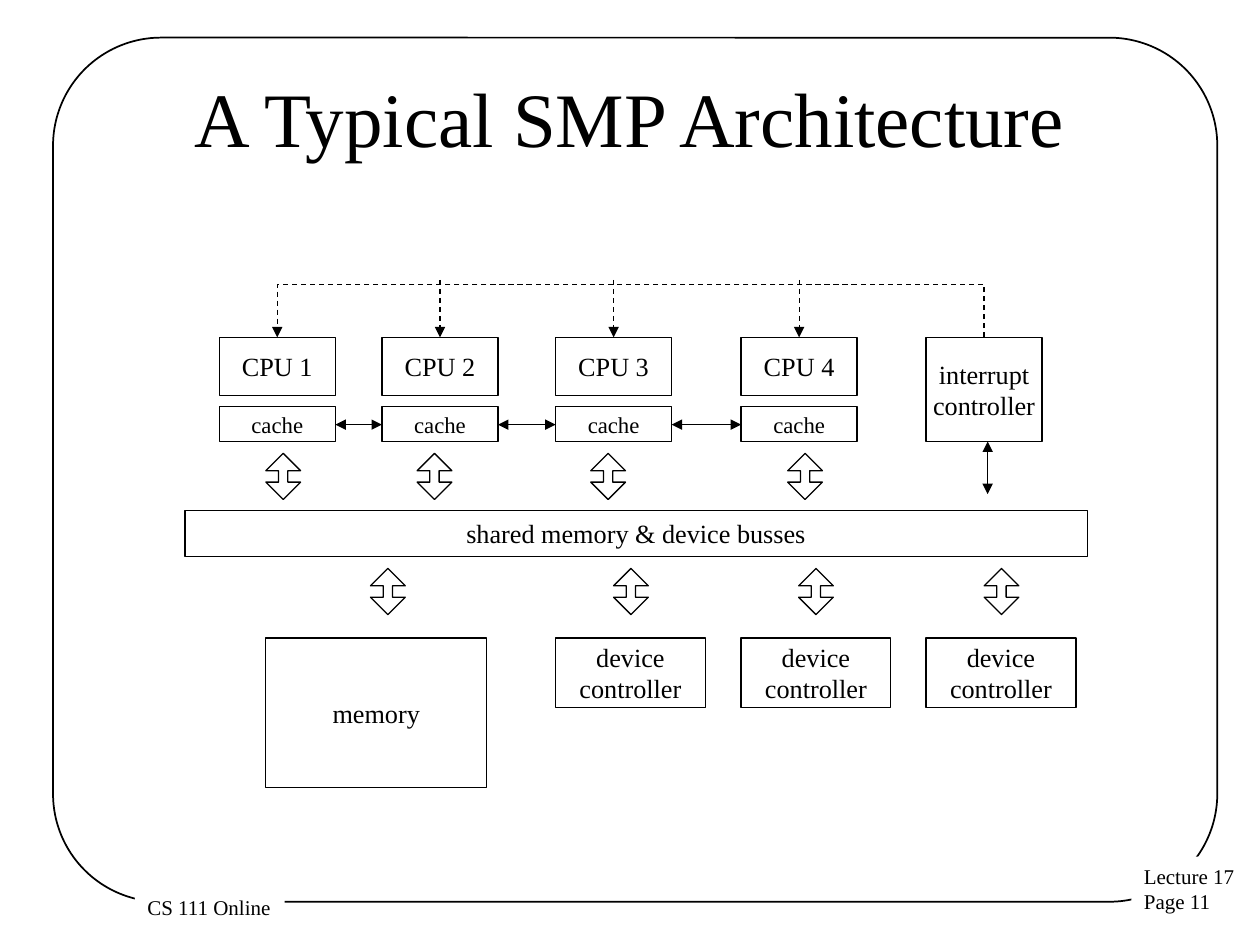
from lxml import etree
from pptx import Presentation
from pptx import util as u
from pptx.dml.color import RGBColor
from pptx.enum import dml, shapes, text
from pptx.oxml import ns

BLACK = RGBColor(0, 0, 0)
WHITE = RGBColor(255, 255, 255)
FONT = "Times New Roman"


def add_box(left, top, width, height, lines=(), size=15, kind=shapes.MSO_SHAPE.RECTANGLE,
            line_width=0.75, fill=None, centred=True, inset=(0.28, 0.15)):
    shape = slide.shapes.add_shape(kind, u.Cm(left), u.Cm(top), u.Cm(width), u.Cm(height))
    shape.shadow.inherit = False
    if fill is None:
        shape.fill.background()
    else:
        shape.fill.solid()
        shape.fill.fore_color.rgb = fill
    if line_width:
        shape.line.color.rgb = BLACK
        shape.line.width = u.Pt(line_width)
    else:
        shape.line.fill.background()
    frame = shape.text_frame
    frame.word_wrap = False
    frame.margin_left = frame.margin_right = u.Cm(inset[0])
    frame.margin_top = frame.margin_bottom = u.Cm(inset[1])
    frame.vertical_anchor = text.MSO_ANCHOR.MIDDLE if centred else text.MSO_ANCHOR.TOP
    for index, line in enumerate(lines):
        paragraph = frame.add_paragraph() if index else frame.paragraphs[0]
        paragraph.alignment = text.PP_ALIGN.CENTER if centred else text.PP_ALIGN.LEFT
        run = paragraph.add_run()
        run.text = line
        run.font.name = FONT
        run.font.size = u.Pt(size)
        run.font.color.rgb = BLACK
    return shape


def style_line(shape, ends, dashed=False):
    shape.line.color.rgb = BLACK
    shape.line.width = u.Pt(0.75)
    if dashed:
        shape.line.dash_style = dml.MSO_LINE.DASH
    outline = shape.line._get_or_add_ln()
    for end in ends:
        etree.SubElement(outline, ns.qn(f"a:{end}"), type="triangle")
    properties = shape._element.spPr
    if properties.find(ns.qn("a:effectLst")) is None:
        etree.SubElement(properties, ns.qn("a:effectLst"))


presentation = Presentation()
presentation.slide_width = u.Cm(25.4)
presentation.slide_height = u.Cm(19.05)
slide = presentation.slides.add_slide(presentation.slide_layouts[6])

frame_box = add_box(1.07, 0.76, 23.47, 17.42, kind=shapes.MSO_SHAPE.ROUNDED_RECTANGLE, line_width=1)
frame_box.adjustments[0] = 0.125
for left, top, width, height, lines in [
    (22.81, 17.27, 2.36, 1.3, ["Lecture 17", "Page 11"]),
    (2.72, 17.91, 3.02, 0.76, ["CS 111 Online"]),
]:
    footer = add_box(left, top, width, height, lines, size=12, line_width=0, fill=WHITE,
                     centred=False, inset=(0.25, 0.13))
    footer.text_frame.auto_size = text.MSO_AUTO_SIZE.SHAPE_TO_FIT_TEXT

title = slide.shapes.add_textbox(u.Cm(1.27), u.Cm(0.76), u.Cm(22.86), u.Cm(3.17))
title.text_frame.word_wrap = True
title.text_frame.vertical_anchor = text.MSO_ANCHOR.MIDDLE
paragraph = title.text_frame.paragraphs[0]
paragraph.alignment = text.PP_ALIGN.CENTER
run = paragraph.add_run()
run.text = "A Typical SMP Architecture"
run.font.name = FONT
run.font.size = u.Pt(44)
run.font.color.rgb = BLACK

cpu_lefts = [4.42, 7.7, 11.2, 14.94]
device_lefts = [11.2, 14.94, 18.67]
interrupt_left = 18.67
cpu_width = 2.34
cpu_top = 6.8

add_box(3.73, 10.29, 18.19, 0.93, ["shared memory & device busses"])
add_box(5.36, 12.86, 4.45, 3.02, ["memory"])
for left in device_lefts:
    add_box(left, 12.86, 3.02, 1.4, ["device", "controller"])
for number, left in enumerate(cpu_lefts, 1):
    add_box(left, cpu_top, cpu_width, 1.17, [f"CPU {number}"])
    add_box(left, 8.2, cpu_width, 0.7, ["cache"], size=13)
add_box(interrupt_left, cpu_top, cpu_width, 2.1, ["interrupt", "controller"])

for top, lefts in [(9.14, [5.36, 8.41, 11.91, 15.88]), (11.46, [7.47, 12.37, 16.1, 19.84])]:
    for left in lefts:
        bus_arrow = add_box(left, top, 0.7, 0.93, kind=shapes.MSO_SHAPE.UP_DOWN_ARROW)
        bus_arrow.adjustments[0] = 0.5
        bus_arrow.adjustments[1] = 0.267

both_ends = ["headEnd", "tailEnd"]
links = [(left + cpu_width, 8.56, following, 8.56, both_ends, False)
         for left, following in zip(cpu_lefts, cpu_lefts[1:])]
links.append((19.91, 9.96, 19.91, 8.9, both_ends, False))
for left in cpu_lefts[1:]:
    centre = left + cpu_width / 2
    links.append((centre, 5.64, centre, cpu_top, ["tailEnd"], True))
for start_x, start_y, end_x, end_y, ends, dashed in links:
    link = slide.shapes.add_connector(shapes.MSO_CONNECTOR.STRAIGHT, u.Cm(start_x), u.Cm(start_y),
                                      u.Cm(end_x), u.Cm(end_y))
    style_line(link, ends, dashed)

interrupt_x = u.Cm(interrupt_left + cpu_width / 2)
first_cpu_x = u.Cm(cpu_lefts[0] + cpu_width / 2)
builder = slide.shapes.build_freeform(interrupt_x, u.Cm(cpu_top))
builder.add_line_segments([(interrupt_x, u.Cm(5.73)), (first_cpu_x, u.Cm(5.73)),
                           (first_cpu_x, u.Cm(cpu_top))], close=False)
interrupt_line = builder.convert_to_shape()
interrupt_line.fill.background()
style_line(interrupt_line, ["tailEnd"], dashed=True)

presentation.save("out.pptx")
